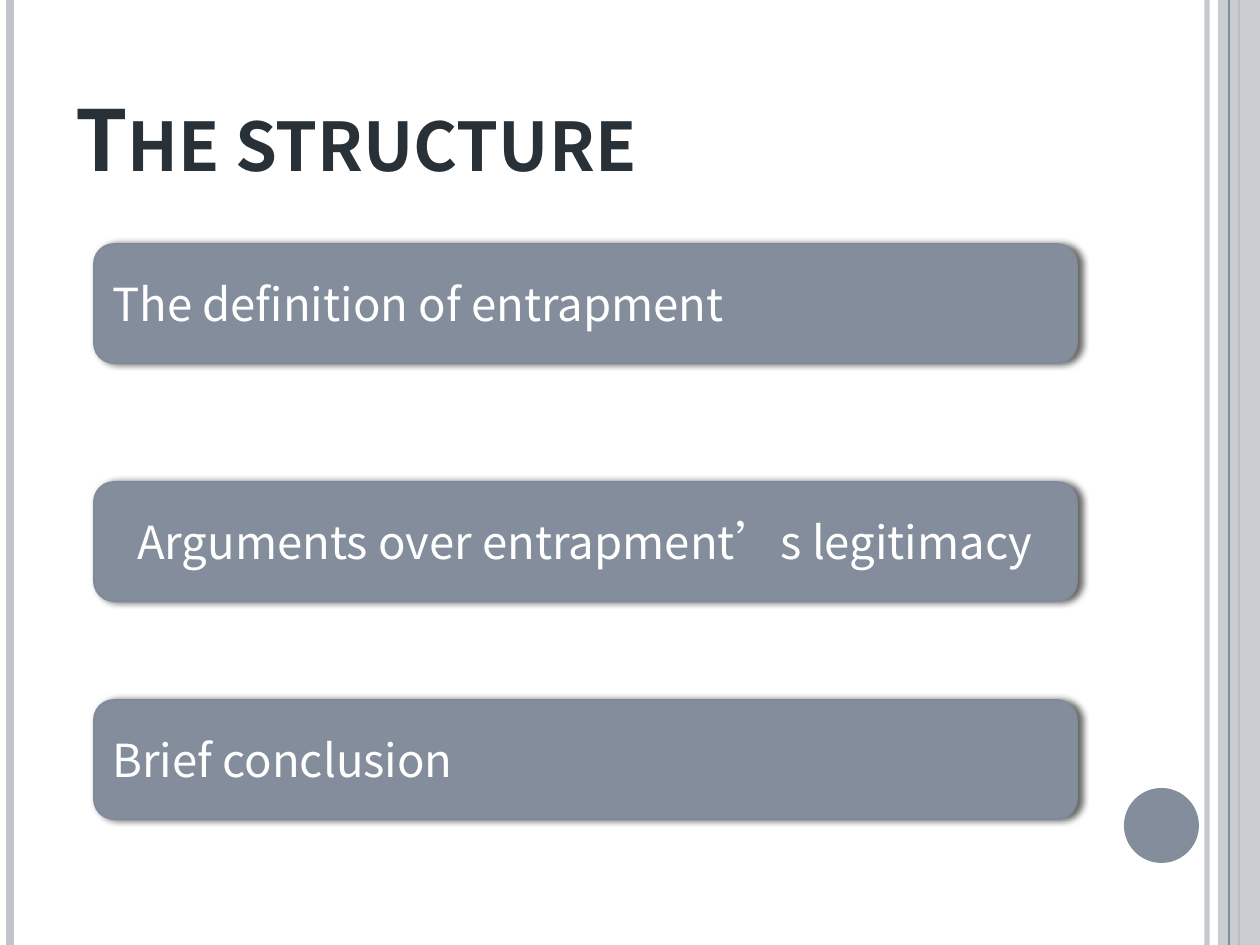
from lxml.etree import SubElement
from pptx import Presentation
from pptx.dml.color import RGBColor
from pptx.enum.shapes import MSO_CONNECTOR as Conn, MSO_SHAPE as Kind
from pptx.enum.text import MSO_ANCHOR as Anchor, PP_ALIGN as Align
from pptx.oxml.ns import qn
from pptx.util import Emu, Pt

SCALE = 914400 / 126
WIDE, HIGH = 1260, 945
FACE = "Noto Sans CJK SC"
HUES = {
    "pale": "C1C5CB",
    "slate": "838D9B",
    "edge": "808A98",
    "ink": "283138",
    "white": "FFFFFF",
    "black": "000000",
}
RULES = [  # x, hue, points, opacity
    (1207, "pale", 3, 93),
    (10, "pale", 4.5, 100),
    (1239, "slate", 1.5, 100),
]
CARDS = [  # top, text, alignment
    (244, "The definition of entrapment", Align.LEFT),
    (482, "Arguments over entrapment’s legitimacy", Align.CENTER),
    (700, "Brief conclusion", Align.LEFT),
]


def px(*nums):
    return [Emu(round(n * SCALE)) for n in nums]


def hue(name):
    return RGBColor.from_string(HUES[name])


def fade(fill, pct):
    """Set the opacity of a solid fill, in percent."""
    if pct < 100:
        clr = fill._xPr.find(qn("a:solidFill"))[0]
        SubElement(clr, qn("a:alpha"), val=str(pct * 1000))


def add_rule(slide, x, name, size, pct=100):
    rule = slide.shapes.add_connector(Conn.STRAIGHT, *px(x, 0, x, HIGH))
    rule.line.width = Pt(size)
    rule.line.fill.solid()
    rule.line.color.rgb = hue(name)
    fade(rule.line.fill, pct)
    SubElement(rule._element.spPr, qn("a:effectLst"))


def add_form(slide, kind, box, name, pct=100):
    form = slide.shapes.add_shape(kind, *px(*box))
    form.shadow.inherit = False
    form.fill.solid()
    form.fill.fore_color.rgb = hue(name)
    fade(form.fill, pct)
    form.line.fill.background()
    return form


def add_shade(form):
    """Give a shape a soft shadow to its right."""
    fx = form._element.spPr.find(qn("a:effectLst"))
    shade = SubElement(fx, qn("a:outerShdw"), blurRad=str(Pt(4)),
                       dist=str(Pt(2)), dir="0", rotWithShape="0")
    clr = SubElement(shade, qn("a:srgbClr"), val=HUES["black"])
    SubElement(clr, qn("a:alpha"), val="60000")


def set_text(form, text, size, name, align, anchor):
    """Fill a shape with one line of text and return its font properties."""
    frame = form.text_frame
    frame.word_wrap = True
    frame.vertical_anchor = anchor
    para = frame.paragraphs[0]
    para.text = text
    para.alignment = align
    font = para.font
    font.name = FACE
    font.size = Pt(size)
    font.color.rgb = hue(name)
    props = para._p.pPr.find(qn("a:defRPr"))
    SubElement(props, qn("a:ea"), typeface=FACE)
    return font, props


def add_card(slide, top, text, align):
    card = add_form(slide, Kind.ROUNDED_RECTANGLE, (94, top, 983, 119), "slate")
    card.line.color.rgb = hue("edge")
    card.line.width = Pt(1)
    add_shade(card)
    set_text(card, text, 26, "white", align, Anchor.MIDDLE)


def add_title(slide, text):
    box = slide.shapes.add_textbox(*px(63, 38, 1029, 157))
    font, props = set_text(box, text, 48, "ink", Align.LEFT, Anchor.BOTTOM)
    font.bold = True
    props.set("cap", "small")


def main():
    deck = Presentation()
    deck.slide_width, deck.slide_height = px(WIDE, HIGH)
    slide = deck.slides.add_slide(deck.slide_layouts[6])
    for rule in RULES:
        add_rule(slide, *rule)
    add_form(slide, Kind.RECTANGLE, (1218, 0, 42, HIGH), "pale", 87)
    add_rule(slide, 1229, "slate", 0.75)
    add_form(slide, Kind.OVAL, (1124, 788, 75, 75), "slate")
    add_title(slide, "The structure")
    for card in CARDS:
        add_card(slide, *card)
    deck.save("out.pptx")


if __name__ == "__main__":
    main()
